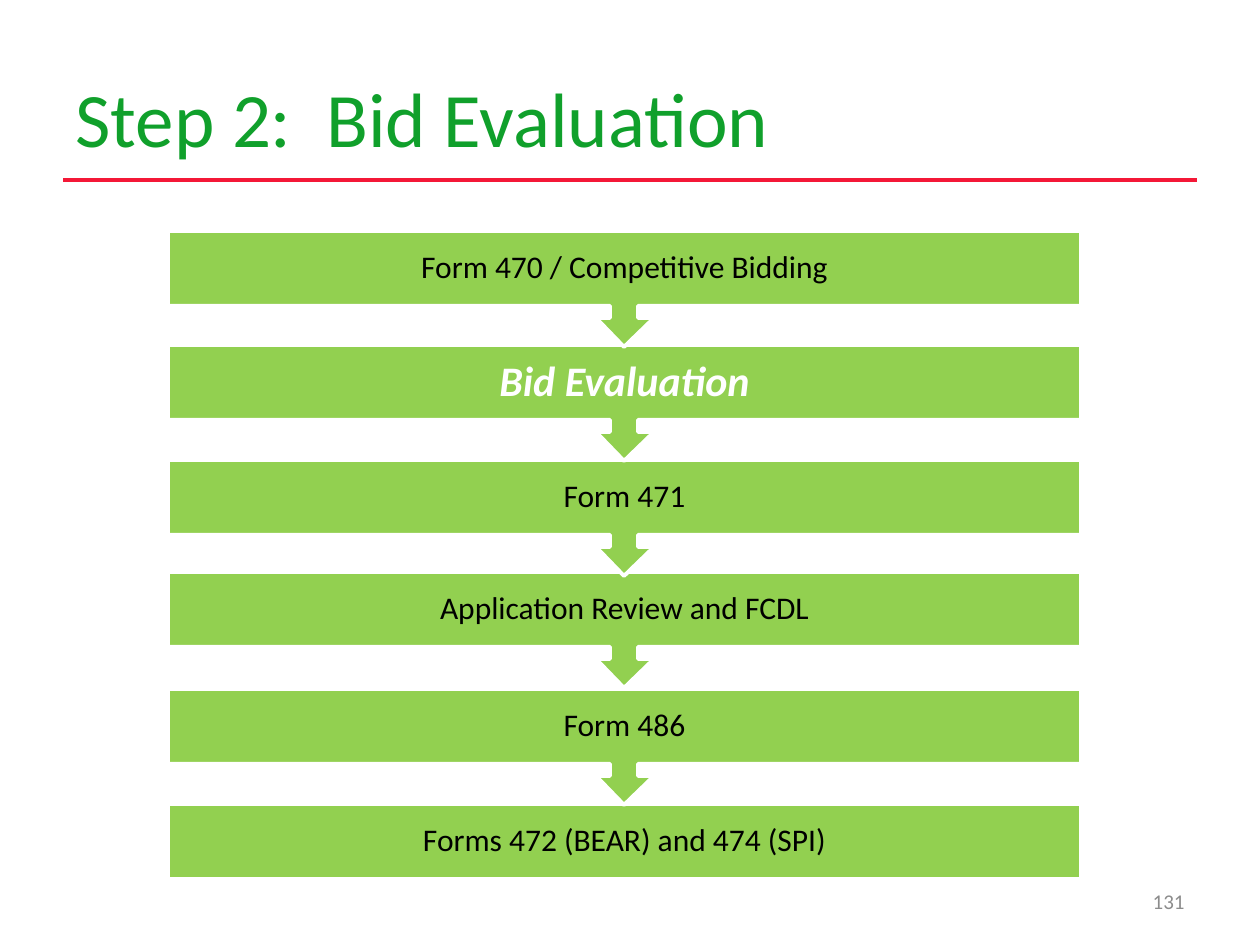
"""Build the bid evaluation slide: a title over a chain of process steps."""
from pptx import Presentation
from pptx.dml.color import RGBColor
from pptx.enum.shapes import MSO_CONNECTOR
from pptx.enum.text import MSO_ANCHOR, PP_ALIGN
from pptx.oxml.ns import qn
from pptx.util import Pt
from lxml.etree import SubElement

TITLE = "Step 2:  Bid Evaluation"
PAGE = "131"
STEPS = [
    (231, "Form 470 / Competitive Bidding"),
    (345, "Bid Evaluation"),
    (460, "Form 471"),
    (572, "Application Review and FCDL"),
    (689, "Form 486"),
    (804, "Forms 472 (BEAR) and 474 (SPI)"),
]
CURRENT = "Bid Evaluation"
COLORS = {"title": "10A02B", "rule": "F41837", "step": "92D050",
          "edge": "FFFFFF", "text": "000000", "page": "8C8C8C"}
FORMATS = {
    "title": {"size": Pt(44)},
    "text": {"size": Pt(18)},
    "edge": {"size": Pt(24), "bold": True, "italic": True},
    "page": {"size": Pt(12)},
}
SCALE = 914400 / 126
LEFT, RIGHT = 168, 1081
BODY, NECK, TIP = 75, 87, 116
HALF_NECK, HALF_HEAD = 14, 29


def px(n):
    return round(n * SCALE)


def rgb(name):
    return RGBColor.from_string(COLORS[name])


def place(sp, *box):
    for name, n in zip(("left", "top", "width", "height"), box):
        setattr(sp, name, px(n))


def write(sp, text, style, align):
    tf = sp.text_frame
    tf.word_wrap = True
    tf.vertical_anchor = MSO_ANCHOR.MIDDLE
    p = tf.paragraphs[0]
    p.alignment = align
    r = p.add_run()
    r.text = text
    r.font.name = "Calibri"
    r.font.color.rgb = rgb(style)
    for name, value in FORMATS[style].items():
        setattr(r.font, name, value)
    return tf


def outline(top, last):
    mid = (LEFT + RIGHT) / 2
    body, neck, tip = top + BODY, top + NECK, top + TIP
    arrow = [(mid + HALF_NECK, body), (mid + HALF_NECK, neck),
             (mid + HALF_HEAD, neck), (mid, tip), (mid - HALF_HEAD, neck),
             (mid - HALF_NECK, neck), (mid - HALF_NECK, body)]
    return [(LEFT, top), (RIGHT, top), (RIGHT, body),
            *([] if last else arrow), (LEFT, body)]


def add_step(shapes, top, text, last):
    start, *points = outline(top, last)
    builder = shapes.build_freeform(*start, scale=SCALE)
    builder.add_line_segments(points, close=True)
    sp = builder.convert_to_shape()
    sp.shadow.inherit = False
    sp.fill.solid()
    sp.fill.fore_color.rgb = rgb("step")
    sp.line.color.rgb = rgb("edge")
    sp.line.width = Pt(2.25)
    current = text == CURRENT
    tf = write(sp, text, "edge" if current else "text", PP_ALIGN.CENTER)
    tf.paragraphs[0].line_spacing = 0.9
    inset = 24 if current else 18
    for side in ("left", "top", "right", "bottom"):
        setattr(tf, f"margin_{side}", px(inset))
    if not last:
        tf.margin_bottom = px(inset + TIP - BODY)


def main():
    prs = Presentation()
    prs.slide_width, prs.slide_height = px(1260), px(945)
    shapes = prs.slides.add_slide(prs.slide_layouts[5]).shapes

    rule = shapes.add_connector(MSO_CONNECTOR.STRAIGHT,
                                px(63), px(180), px(1197), px(180))
    rule.line.color.rgb = rgb("rule")
    rule.line.width = Pt(2)
    SubElement(rule._element.spPr, qn("a:effectLst"))

    place(shapes.title, 63, 38, 1134, 157)
    write(shapes.title, TITLE, "title", PP_ALIGN.LEFT)

    for top, text in reversed(STEPS):
        add_step(shapes, top, text, text == STEPS[-1][1])

    page = shapes.add_textbox(px(903), px(876), px(294), px(50))
    write(page, PAGE, "page", PP_ALIGN.RIGHT)
    prs.save("out.pptx")


if __name__ == "__main__":
    main()
